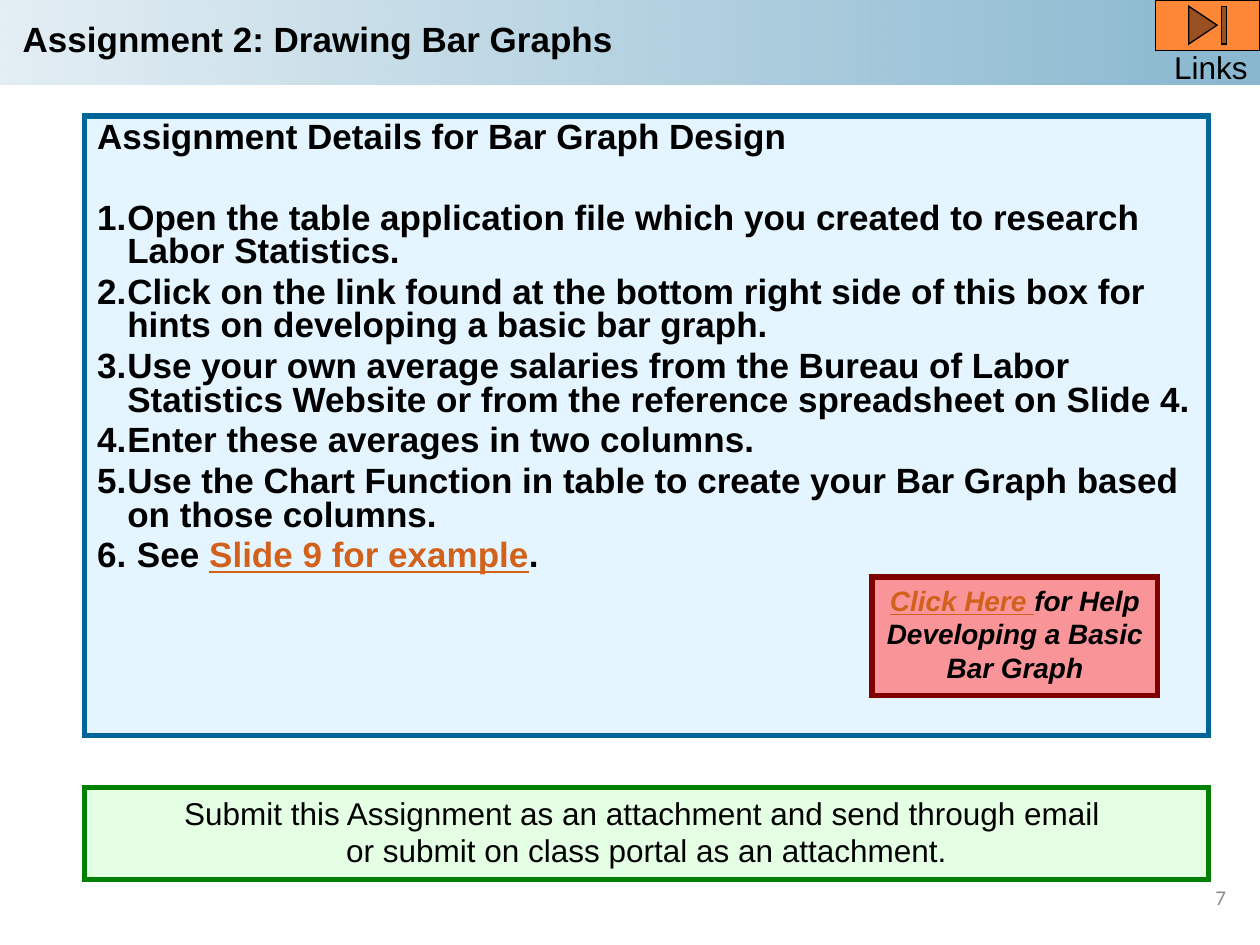
from dataclasses import dataclass

from pptx import Presentation
from pptx.dml.color import RGBColor
from pptx.enum.shapes import MSO_SHAPE as Preset
from pptx.enum.text import MSO_ANCHOR as Anchor, MSO_AUTO_SIZE as AutoSize, PP_ALIGN as Align
from pptx.oxml.ns import qn
from pptx.util import Inches, Pt


@dataclass(frozen=True)
class Theme:
    font: str = "Arial"
    number_font: str = "Calibri"
    ink: str = "000000"
    muted: str = "8C8C8C"
    link: str = "D2611C"
    blue: str = "006699"
    orange: str = "FE8637"
    details_fill: str = "CCECFF"
    submit_fill: str = "CCFFCC"
    submit_line: str = "008000"
    help_fill: str = "FF7C80"
    help_line: str = "800000"
    heading: int = 20
    normal: int = 18
    small: int = 16
    number: int = 12
    border: float = 3


THEME = Theme()
WIDTH, HEIGHT = 10, 7.5
PANEL_LEFT, PANEL_WIDTH = 0.67, 8.92

STEPS = [
    "Open the table application file which you created to research Labor Statistics.",
    "Click on the link found at the bottom right side of this box for hints on "
    "developing a basic bar graph.",
    "Use your own average salaries from the Bureau of Labor Statistics Website or "
    "from the reference spreadsheet on Slide 4.",
    "Enter these averages in two columns.",
    "Use the Chart Function in table to create your Bar Graph based on those columns.",
]


def place(shape, box):
    shape.left, shape.top, shape.width, shape.height = map(Inches, box)


def set_alpha(color_element, percent):
    alpha = color_element.makeelement(qn("a:alpha"), {"val": str(percent * 1000)})
    color_element.append(alpha)


def paint(shape, fill, line, width, opacity=100):
    shape.fill.solid()
    shape.fill.fore_color.rgb = RGBColor.from_string(fill)
    if opacity < 100:
        set_alpha(shape._element.spPr.find(f"{qn('a:solidFill')}/{qn('a:srgbClr')}"), opacity)
    shape.line.color.rgb = RGBColor.from_string(line)
    shape.line.width = Pt(width)
    # Square corners on the border
    outline = shape._element.spPr.find(qn("a:ln"))
    outline.append(outline.makeelement(qn("a:miter"), {"lim": "800000"}))


def add_run(paragraph, words, size, color=THEME.ink, bold=False, italic=False,
            underline=False, font=THEME.font):
    run = paragraph.add_run()
    run.text = words
    run.font.name, run.font.size = font, Pt(size)
    run.font.color.rgb = RGBColor.from_string(color)
    run.font.bold, run.font.italic, run.font.underline = bold, italic, underline


def set_frame(shape, wrap=True, anchor=Anchor.TOP):
    frame = shape.text_frame
    frame.auto_size = AutoSize.NONE
    frame.word_wrap, frame.vertical_anchor = wrap, anchor
    return frame


def add_panel(slide, box, fill, line, opacity, preset=Preset.RECTANGLE, width=THEME.border):
    panel = slide.shapes.add_shape(preset, *map(Inches, box))
    panel.shadow.inherit = False
    paint(panel, fill, line, width, opacity)
    return panel


def header(slide, box):
    left, top, width, height = box
    # Band fading in from the left, behind the title
    band = slide.shapes.add_shape(Preset.RECTANGLE, *map(Inches, box))
    band.shadow.inherit = False
    band.line.fill.background()
    band.fill.gradient()
    band.fill.gradient_angle = 0
    for stop, position in zip(band.fill.gradient_stops, (0, 1)):
        stop.color.rgb = RGBColor.from_string(THEME.blue)
        stop.position = position
    for color_element, opacity in zip(band._element.spPr.iter(qn("a:srgbClr")), (11, 47)):
        set_alpha(color_element, opacity)

    title = slide.shapes.title
    title._element.addprevious(band._element)
    place(title, (left + 0.08, top + 0.09, width / 2, 0.44))
    heading = set_frame(title, wrap=False).paragraphs[0]
    heading.alignment = Align.LEFT
    add_run(heading, "Assignment 2: Drawing Bar Graphs", THEME.heading, bold=True)

    # Button and its label at the right edge
    right = left + width
    add_panel(slide, (right - 0.83, top, 0.83, 0.4), THEME.orange, THEME.ink, 100,
              Preset.ACTION_BUTTON_END, 0.75)
    label = slide.shapes.add_textbox(*map(Inches, (right - 0.78, top + height / 2, 0.78, 0.4)))
    add_run(set_frame(label, wrap=False).paragraphs[0], "Links", THEME.normal)


def format_step(paragraph, numbered):
    paragraph.line_spacing = 0.8
    paragraph.space_before = Pt(4)
    properties = paragraph._p.get_or_add_pPr()
    properties.set("marL", str(Inches(0.24)))
    properties.set("indent", str(-Inches(0.24)))
    bullet, kind = ("a:buAutoNum", {"type": "arabicPeriod"}) if numbered else ("a:buNone", {})
    properties.append(properties.makeelement(qn(bullet), kind))


def details(slide, box):
    body = slide.placeholders[1]
    place(body, box)
    paint(body, THEME.details_fill, THEME.blue, THEME.border, 50)
    frame = set_frame(body)
    heading = frame.paragraphs[0]
    format_step(heading, numbered=False)
    add_run(heading, "Assignment Details for Bar Graph Design", THEME.heading, bold=True)

    example = [(" See ", {}),
               ("Slide 9 for example", {"color": THEME.link, "underline": True}),
               (".", {})]
    for index, parts in enumerate([[(step, {})] for step in STEPS] + [example]):
        item = frame.add_paragraph()
        format_step(item, numbered=True)
        if index == 0:
            item.space_before = Pt(27)
        for words, style in parts:
            add_run(item, words, THEME.heading, bold=True, **style)

    # Help note in the lower right corner
    left, top, width, height = box
    note = add_panel(slide, (left + width - 2.67, top + height - 1.26, 2.27, 0.94),
                     THEME.help_fill, THEME.help_line, 80)
    hint = set_frame(note).paragraphs[0]
    hint.alignment = Align.CENTER
    add_run(hint, "Click Here ", THEME.small, THEME.link, True, True, True)
    add_run(hint, "for Help Developing a Basic Bar Graph", THEME.small, bold=True, italic=True)


def submission(slide, box):
    panel = add_panel(slide, box, THEME.submit_fill, THEME.submit_line, 50)
    frame = set_frame(panel)
    first, second = frame.paragraphs[0], frame.add_paragraph()
    first.alignment = second.alignment = Align.CENTER
    add_run(first, "Submit this Assignment as an attachment and send through email ",
            THEME.normal)
    add_run(second, "or submit on class portal as an attachment.", THEME.normal)


def page_number(slide, box):
    number = slide.shapes.add_textbox(*map(Inches, box))
    paragraph = set_frame(number, anchor=Anchor.MIDDLE).paragraphs[0]
    paragraph.alignment = Align.RIGHT
    add_run(paragraph, "7", THEME.number, THEME.muted, font=THEME.number_font)


def main():
    deck = Presentation()
    deck.slide_width, deck.slide_height = Inches(WIDTH), Inches(HEIGHT)
    slide = deck.slides.add_slide(deck.slide_layouts[1])
    header(slide, (0, 0, WIDTH, 0.67))
    details(slide, (PANEL_LEFT, 0.92, PANEL_WIDTH, 4.92))
    submission(slide, (PANEL_LEFT, 6.25, PANEL_WIDTH, 0.73))
    page_number(slide, (WIDTH * 0.75, 6.92, 2.33, 0.4))
    deck.save("out.pptx")


if __name__ == "__main__":
    main()
